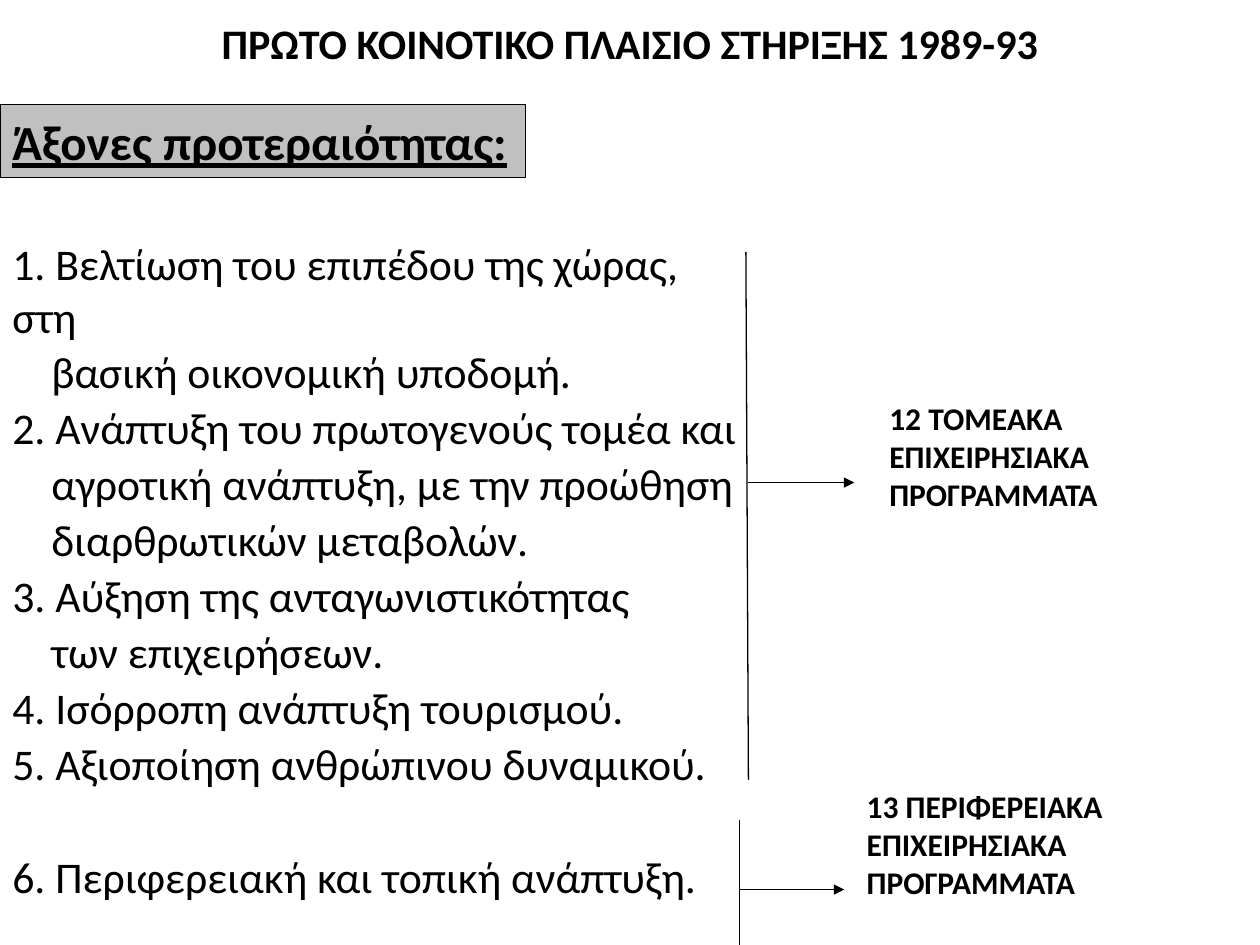
from pptx import Presentation
from pptx.dml.color import RGBColor
from pptx.enum.shapes import MSO_CONNECTOR as Connector, MSO_SHAPE as Shape
from pptx.enum.text import MSO_ANCHOR as Anchor, PP_ALIGN as Align
from pptx.oxml.ns import qn
from pptx.util import Inches, Pt
from lxml.etree import SubElement


def color(value):
    return RGBColor.from_string(value)


def write(frame, lines, size, bold=False, align=Align.LEFT):
    frame.word_wrap = True
    frame.text = "\n".join(lines)
    for para in frame.paragraphs:
        para.alignment = align
        para.font.name = "Calibri"
        para.font.size = Pt(size)
        para.font.bold = bold
        para.font.color.rgb = color("000000")


deck = Presentation()
deck.slide_width, deck.slide_height = Inches(10), Inches(7.5)
page = deck.slides.add_slide(deck.slide_layouts[5])

title = page.shapes.title
title.left, title.top = Inches(0.75), Inches(0)
title.width, title.height = Inches(8.5), Inches(0.67)
title.text_frame.vertical_anchor = Anchor.MIDDLE
write(title.text_frame, ["ΠΡΩΤΟ ΚΟΙΝΟΤΙΚΟ ΠΛΑΙΣΙΟ ΣΤΗΡΙΞΗΣ 1989-93"], 24, True, Align.CENTER)

heading = page.shapes.add_shape(
    Shape.RECTANGLE, Inches(0), Inches(0.83), Inches(4.17), Inches(0.58))
heading.shadow.inherit = False
heading.fill.solid()
heading.fill.fore_color.rgb = color("C0C0C0")
heading.line.color.rgb = color("000000")
heading.line.width = Pt(0.75)
heading.text_frame.vertical_anchor = Anchor.MIDDLE
write(heading.text_frame, ["Άξονες προτεραιότητας:"], 28, True)
heading.text_frame.paragraphs[0].font.underline = True

axes = [
    "1. Βελτίωση του επιπέδου της χώρας, στη",
    "βασική οικονομική υποδομή.",
    "2. Ανάπτυξη του πρωτογενούς τομέα και",
    "αγροτική ανάπτυξη, με την προώθηση",
    "διαρθρωτικών μεταβολών.",
    "3. Αύξηση της ανταγωνιστικότητας",
    "των επιχειρήσεων.",
    "4. Ισόρροπη ανάπτυξη τουρισμού.",
    "5. Αξιοποίηση ανθρώπινου δυναμικού.",
    "6. Περιφερειακή και τοπική ανάπτυξη.",
]
axes_box = page.shapes.add_textbox(Inches(0), Inches(1.83), Inches(5.96), Inches(5.52))
write(axes_box.text_frame, axes, 25)
for para in axes_box.text_frame.paragraphs:
    para.space_before = para.space_after = Pt(1)
    if not para.text[0].isdigit():
        para._p.get_or_add_pPr().set("marL", str(Inches(0.31)))
axes_box.text_frame.paragraphs[-1].space_before = Pt(33.5)

programmes = [("12 ΤΟΜΕΑΚΑ", 6.96, 3.12), ("13 ΠΕΡΙΦΕΡΕΙΑΚΑ", 6.78, 6.2)]
for name, left, top in programmes:
    box = page.shapes.add_textbox(Inches(left), Inches(top), Inches(10 - left), Inches(1.3))
    write(box.text_frame, [name, "ΕΠΙΧΕΙΡΗΣΙΑΚΑ", "ΠΡΟΓΡΑΜΜΑΤΑ"], 18, True)

lines = [
    (5.92, 2, 5.94, 6.19, False),
    (5.94, 3.83, 6.78, 3.83, True),
    (5.87, 6.51, 5.87, 7.5, False),
    (5.87, 7.06, 6.7, 7.06, True),
]
for *ends, has_arrow in lines:
    line = page.shapes.add_connector(Connector.STRAIGHT, *map(Inches, ends))
    line.line.color.rgb = color("000000")
    line.line.width = Pt(0.75)
    if has_arrow:
        SubElement(line.line._get_or_add_ln(), qn("a:tailEnd"), type="triangle")
    SubElement(line._element.spPr, qn("a:effectLst"))

deck.save("out.pptx")
